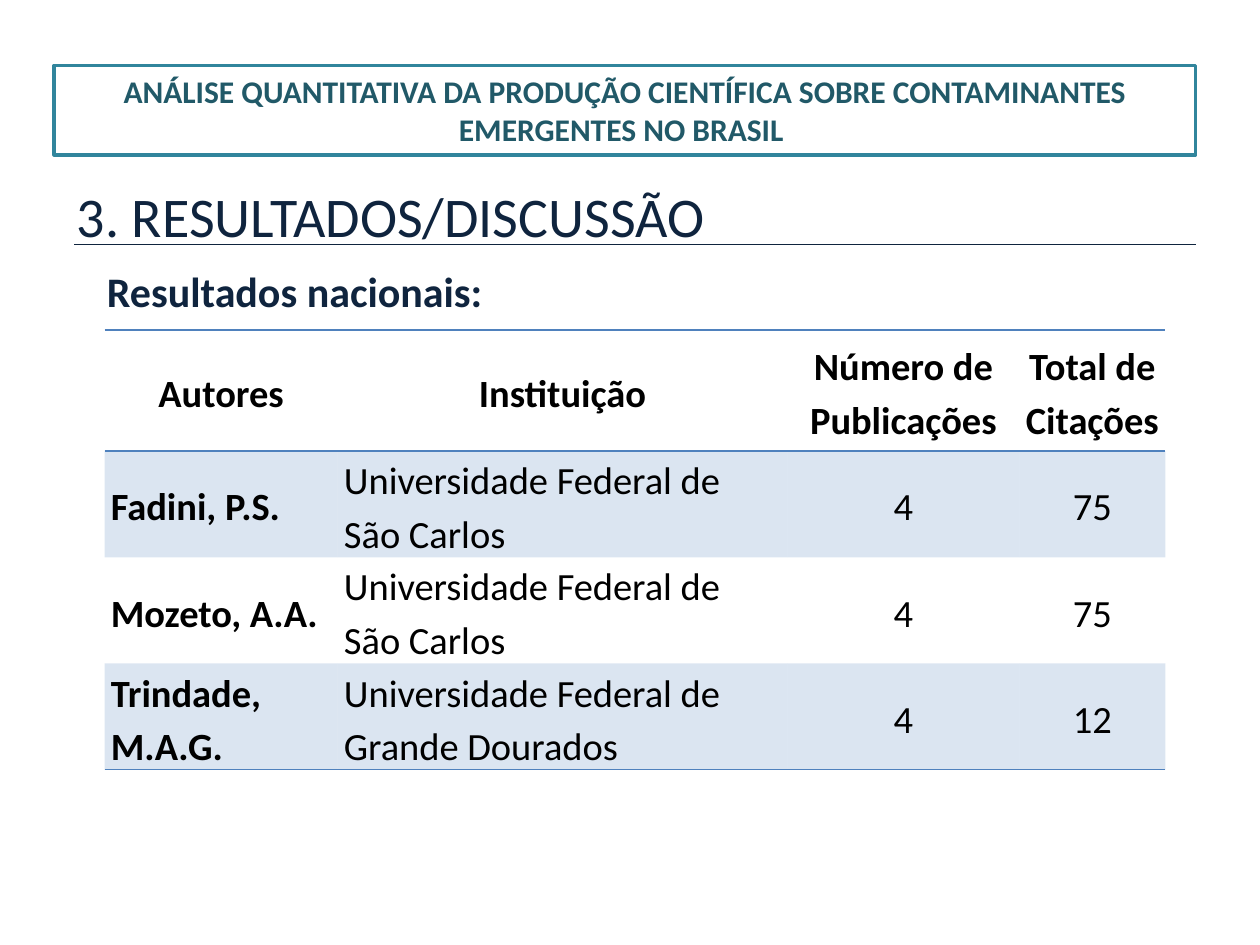
from dataclasses import dataclass

from lxml import etree
from pptx import Presentation
from pptx.dml.color import RGBColor
from pptx.enum.shapes import MSO_CONNECTOR, MSO_SHAPE
from pptx.enum.text import MSO_ANCHOR, MSO_AUTO_SIZE, PP_ALIGN
from pptx.oxml.ns import qn
from pptx.util import Inches, Pt

LEFT, CENTER = PP_ALIGN.LEFT, PP_ALIGN.CENTER
TOP, MIDDLE = MSO_ANCHOR.TOP, MSO_ANCHOR.MIDDLE
FIXED_SIZE = MSO_AUTO_SIZE.NONE
STRAIGHT = MSO_CONNECTOR.STRAIGHT
RECTANGLE = MSO_SHAPE.RECTANGLE
PLAIN_TABLE_STYLE = "{2D5ABB26-0587-4C30-8999-92F81FD0307C}"


@dataclass(frozen=True)
class Theme:
    """Colours, font and type sizes of the slide."""
    font: str = "Calibri"
    navy: str = "0F243E"
    teal: str = "215968"
    frame: str = "31859C"
    accent: str = "4F81BD"
    black: str = "000000"
    banner_size: int = 18
    title_size: int = 32
    subtitle_size: int = 24
    table_size: int = 22


THEME = Theme()
BANNER = "ANÁLISE QUANTITATIVA DA PRODUÇÃO CIENTÍFICA SOBRE CONTAMINANTES EMERGENTES NO BRASIL "
HEADERS = ("Autores", "Instituição", "Número de Publicações", "Total de Citações")
AUTHORS = (
    ("Fadini, P.S.", "Universidade Federal de São Carlos", "4", "75"),
    ("Mozeto, A.A.", "Universidade Federal de São Carlos", "4", "75"),
    ("Trindade, M.A.G.", "Universidade Federal de Grande Dourados", "4", "12"),
)
COLUMN_WIDTHS = (1.85, 3.57, 1.84, 1.16)
HEADER_HEIGHT, ROW_HEIGHT = 0.96, 0.79


def write_text(frame, text, *, size, color, bold=False, align=LEFT, spacing=1.0):
    """Write one formatted paragraph into a text frame."""
    frame.word_wrap = True
    paragraph = frame.paragraphs[0]
    paragraph.alignment = align
    paragraph.line_spacing = spacing
    run = paragraph.add_run()
    run.text = text
    run.font.name = THEME.font
    run.font.size = Pt(size)
    run.font.bold = bold
    run.font.color.rgb = RGBColor.from_string(color)


def add_banner(slide, left, top, width, height):
    """Add the framed study title."""
    shape = slide.shapes.add_shape(
        RECTANGLE, Inches(left), Inches(top), Inches(width), Inches(height))
    shape.shadow.inherit = False
    shape.fill.background()
    shape.line.color.rgb = RGBColor.from_string(THEME.frame)
    shape.line.width = Pt(2)
    shape.text_frame.vertical_anchor = TOP
    write_text(shape.text_frame, BANNER, size=THEME.banner_size,
               color=THEME.teal, bold=True, align=CENTER)


def add_section_title(slide, left, top, width, height):
    """Place the section title and the rule under it."""
    title = slide.shapes.title
    title.left, title.top = Inches(left), Inches(top)
    title.width, title.height = Inches(width), Inches(height)
    title.text_frame.auto_size = FIXED_SIZE
    title.text_frame.vertical_anchor = TOP
    write_text(title.text_frame, "3. RESULTADOS/DISCUSSÃO",
               size=THEME.title_size, color=THEME.navy)
    rule_left, rule_top = Inches(left + 0.08), Inches(top + 0.55)
    rule = slide.shapes.add_connector(
        STRAIGHT, rule_left, rule_top, rule_left + Inches(8.9), rule_top)
    rule.line.color.rgb = RGBColor.from_string(THEME.navy)
    rule.line.width = Pt(0.75)
    etree.SubElement(rule._element.spPr, qn("a:effectLst"))


def add_subtitle(slide, left, top, width, height):
    """Add the heading above the table."""
    box = slide.shapes.add_textbox(
        Inches(left), Inches(top), Inches(width), Inches(height))
    write_text(box.text_frame, "Resultados nacionais:",
               size=THEME.subtitle_size, color=THEME.navy, bold=True)


def set_borders(cell, sides):
    """Draw accent lines on the given sides, in schema order."""
    properties = cell._tc.get_or_add_tcPr()
    for index, side in enumerate(sides):
        line = etree.Element(qn(f"a:ln{side}"), w=str(Pt(1)))
        fill = etree.SubElement(line, qn("a:solidFill"))
        etree.SubElement(fill, qn("a:srgbClr"), val=THEME.accent)
        properties.insert(index, line)


def shade_cell(cell, shaded):
    """Give a cell a light accent tint, or no fill."""
    if not shaded:
        cell.fill.background()
        return
    cell.fill.solid()
    cell.fill.fore_color.rgb = RGBColor.from_string(THEME.accent)
    color = cell._tc.tcPr.find(f".//{qn('a:srgbClr')}")
    etree.SubElement(color, qn("a:alpha"), val="20000")


def add_author_table(slide, left, top, width, height):
    """Add the banded table of authors."""
    rows = (HEADERS, *AUTHORS)
    table = slide.shapes.add_table(
        len(rows), len(HEADERS), Inches(left), Inches(top),
        Inches(width), Inches(height)).table
    table._tbl.tblPr.find(qn("a:tableStyleId")).text = PLAIN_TABLE_STYLE
    for column, column_width in zip(table.columns, COLUMN_WIDTHS):
        column.width = Inches(column_width)
    for row_index, values in enumerate(rows):
        is_header = row_index == 0
        table.rows[row_index].height = Inches(HEADER_HEIGHT if is_header else ROW_HEIGHT)
        for column_index, value in enumerate(values):
            cell = table.cell(row_index, column_index)
            cell.margin_left = cell.margin_right = Inches(0.05)
            cell.margin_top = cell.margin_bottom = 0
            cell.vertical_anchor = MIDDLE
            write_text(cell.text_frame, value, size=THEME.table_size, color=THEME.black,
                       bold=is_header or column_index == 0, spacing=1.15,
                       align=CENTER if is_header or column_index > 1 else LEFT)
            shade_cell(cell, row_index % 2 == 1)
            if is_header:
                set_borders(cell, "TB")
            elif row_index == len(rows) - 1:
                set_borders(cell, "B")


def main():
    """Build and save the presentation."""
    presentation = Presentation()
    presentation.slide_width, presentation.slide_height = Inches(10), Inches(7.5)
    slide = presentation.slides.add_slide(presentation.slide_layouts[5])
    add_section_title(slide, 0.51, 1.39, 5.67, 0.64)
    add_banner(slide, 0.43, 0.52, 9.06, 0.71)
    add_subtitle(slide, 0.75, 2.06, 4.72, 0.81)
    add_author_table(slide, 0.83, 2.62, sum(COLUMN_WIDTHS),
                     HEADER_HEIGHT + ROW_HEIGHT * len(AUTHORS))
    presentation.save("out.pptx")


if __name__ == "__main__":
    main()
